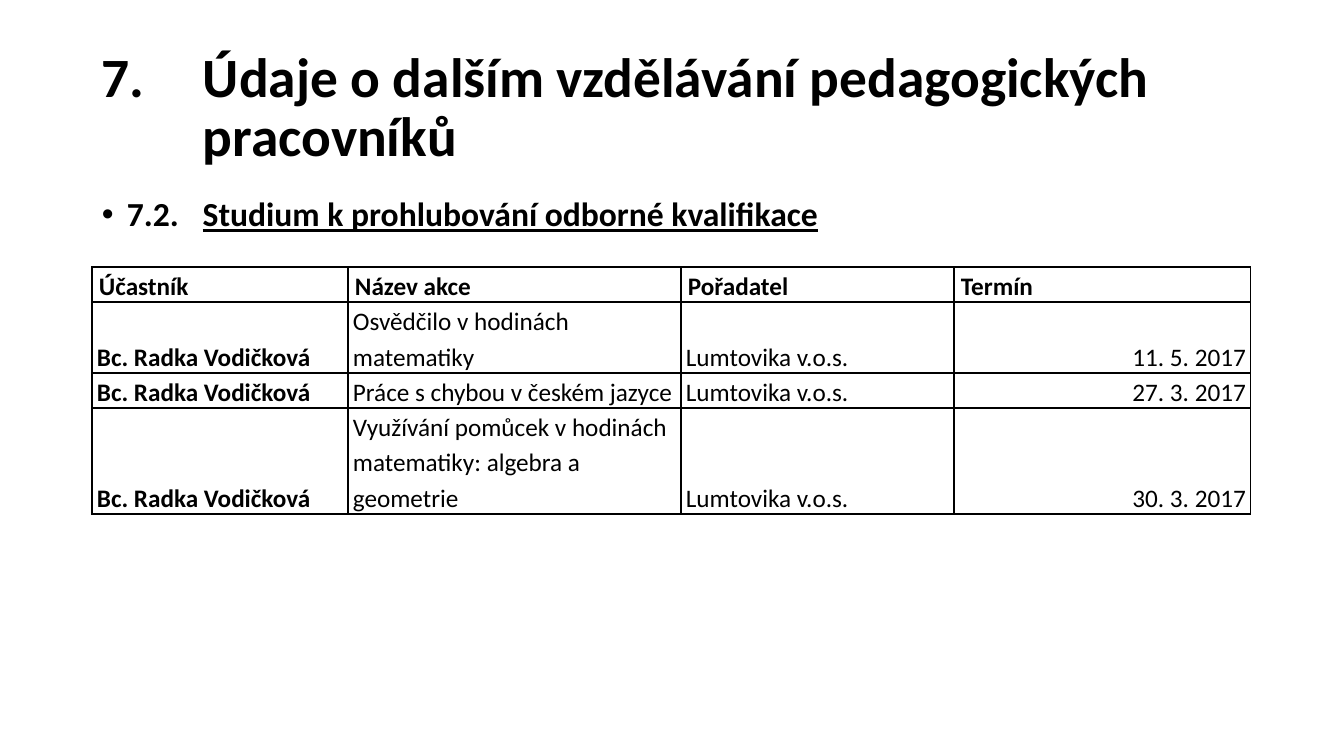
"""Build the slide on further training of teaching staff."""
from dataclasses import dataclass

from lxml.etree import SubElement
from pptx import Presentation
from pptx.dml.color import RGBColor
from pptx.enum.text import MSO_ANCHOR, PP_ALIGN
from pptx.oxml.ns import qn
from pptx.slide import Slide
from pptx.table import _Cell as Cell
from pptx.text.text import Font, _Paragraph as Para
from pptx.util import Emu, Pt

SCALE = 914400 / 100.8
LEFT, WIDTH = 92, 1159
INK = "000000"
COLS = (256, 333, 273, 297)
HEADS = ("Účastník", "Název akce", "Pořadatel", "Termín")
NAME = "Bc. Radka Vodičková"
HOST = "Lumtovika v.o.s."


@dataclass(frozen=True)
class Course:
    title: str
    date: str
    height: int


COURSES = (
    Course("Osvědčilo v hodinách matematiky", "11. 5. 2017", 71),
    Course("Práce s chybou v českém jazyce", "27. 3. 2017", 35),
    Course("Využívání pomůcek v hodinách matematiky: algebra a geometrie",
           "30. 3. 2017", 106),
)


def px(count: int) -> Emu:
    return Emu(round(count * SCALE))


def color(code: str) -> RGBColor:
    return RGBColor.from_string(code)


def style(font: Font, size: float, bold: bool) -> None:
    font.name, font.size, font.bold = "Calibri", Pt(size), bold
    font.color.rgb = color(INK)


def add_text(slide: Slide, top: int, height: int, anchor: MSO_ANCHOR,
             hang: int, inset: int) -> Para:
    box = slide.shapes.add_textbox(px(LEFT), px(top), px(WIDTH), px(height))
    frame = box.text_frame
    frame.word_wrap = True
    frame.vertical_anchor = anchor
    para = frame.paragraphs[0]
    para.line_spacing = 0.9
    props = para._p.get_or_add_pPr()
    props.set("marL", str(px(inset)))
    props.set("indent", str(-px(hang)))
    return para


def add_edges(cell: Cell) -> None:
    props = cell._tc.get_or_add_tcPr()
    for side in ("lnL", "lnR", "lnT", "lnB"):
        line = SubElement(props, qn(f"a:{side}"), w=str(Pt(1)))
        fill = SubElement(line, qn("a:solidFill"))
        SubElement(fill, qn("a:srgbClr"), val=INK)


def fill_cell(cell: Cell, text: str, head: bool, bold: bool, right: bool) -> None:
    add_edges(cell)
    cell.fill.background()
    cell.margin_left = cell.margin_right = px(7 if head else 5)
    cell.margin_top = cell.margin_bottom = 0
    cell.vertical_anchor = MSO_ANCHOR.TOP if head else MSO_ANCHOR.BOTTOM
    para = cell.text_frame.paragraphs[0]
    para.text = text
    para.line_spacing = 1.15
    para.alignment = PP_ALIGN.RIGHT if right else PP_ALIGN.LEFT
    if head:
        para.space_after = Pt(10)
    style(para.font, 18, bold)


def add_grid(slide: Slide) -> None:
    rows = [HEADS] + [(NAME, c.title, HOST, c.date) for c in COURSES]
    sizes = [35] + [c.height for c in COURSES]
    table = slide.shapes.add_table(len(rows), len(COLS), px(LEFT), px(267),
                                   px(WIDTH), px(sum(sizes))).table
    table.first_row = table.horz_banding = False
    for col, width in zip(table.columns, COLS):
        col.width = px(width)
    for r, (texts, size) in enumerate(zip(rows, sizes)):
        table.rows[r].height = px(size)
        head = r == 0
        for c, text in enumerate(texts):
            last = c == len(COLS) - 1
            fill_cell(table.cell(r, c), text, head, head or c == 0,
                      last and not head)


def main() -> None:
    deck = Presentation()
    deck.slide_width, deck.slide_height = px(1344), px(756)
    slide = deck.slides.add_slide(deck.slide_layouts[6])

    title = add_text(slide, 42, 134, MSO_ANCHOR.MIDDLE, 101, 101)
    title.add_run().text = "7.\tÚdaje o dalším vzdělávání pedagogických pracovníků"
    style(title.font, 39.6, True)

    topic = add_text(slide, 193, 489, MSO_ANCHOR.TOP, 25, 25)
    topic.space_before = Pt(10)
    props = topic._p.get_or_add_pPr()
    SubElement(props, qn("a:buFont"), typeface="Arial")
    SubElement(props, qn("a:buChar"), char="•")
    topic.add_run().text = "7.2.\t"
    name = topic.add_run()
    name.text = "Studium k prohlubování odborné kvalifikace"
    name.font.underline = True
    style(topic.font, 24, True)

    add_grid(slide)
    deck.save("out.pptx")


if __name__ == "__main__":
    main()
